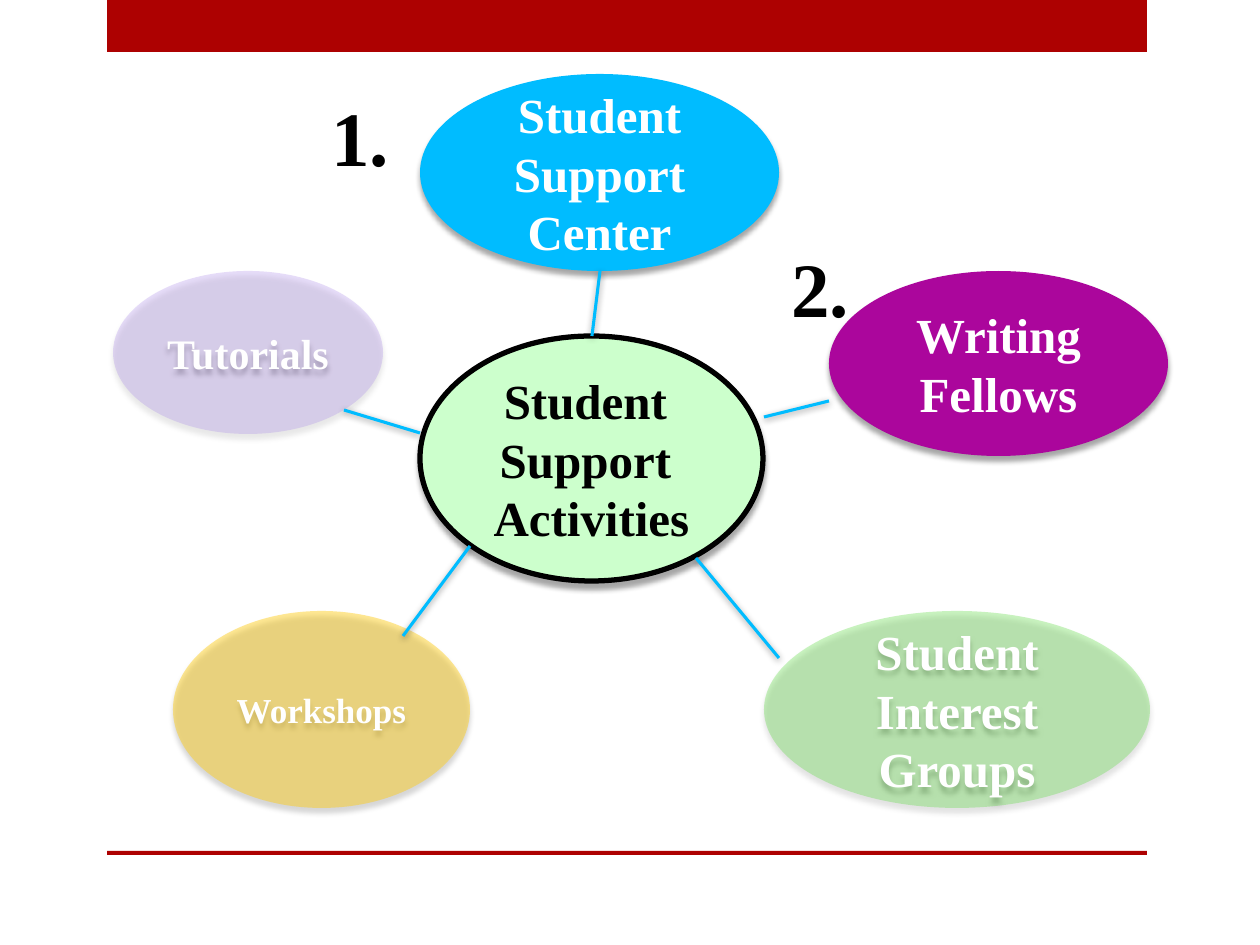
from lxml.etree import SubElement
from pptx import Presentation
from pptx.dml.color import RGBColor
from pptx.enum.shapes import MSO_CONNECTOR, MSO_SHAPE
from pptx.enum.text import MSO_ANCHOR, MSO_AUTO_SIZE, PP_ALIGN
from pptx.oxml.ns import qn
from pptx.util import Emu, Pt

FONT = "Times New Roman"
COLORS = {
    "red": "AD0101", "mint": "CCFFCC", "sky": "00BCFF", "green": "59DB3C",
    "lavender": "A27DE9", "purple": "AB069C", "gold": "FFCD15",
    "black": "000000", "white": "FFFFFF",
}
ACTIVITIES = [
    ("Student Support Center", (420, 74, 359, 197), "sky", 100, 28),
    ("Student Interest Groups", (764, 611, 386, 197), "green", 32, 28),
    ("Tutorials", (113, 271, 270, 163), "lavender", 26, 24),
    ("Writing Fellows", (829, 271, 339, 185), "purple", 100, 28),
    ("Workshops", (173, 611, 297, 197), "gold", 46, 20),
]
NUMBERS = [("1.", 319, 83), ("2.", 779, 234)]
SPOKES = [
    (600, 271, 592, 336), (764, 417, 829, 401), (696, 558, 779, 658),
    (470, 546, 403, 636), (420, 433, 344, 410),
]


def px(n):
    """Convert pixels at 126 to the inch into EMU."""
    return Emu(round(n * 914400 / 126))


def rgb(name):
    """Look up a named colour."""
    return RGBColor.from_string(COLORS[name])


def add_shadow(spPr, alpha, blur, dist, angle):
    """Give the shape properties one soft black outer shadow."""
    effects = spPr.find(qn("a:effectLst"))
    if effects is None:
        effects = SubElement(spPr, qn("a:effectLst"))
    shadow = SubElement(effects, qn("a:outerShdw"), blurRad=str(Pt(blur)),
                        dist=str(Pt(dist)), dir=str(angle * 60000), rotWithShape="0")
    color = SubElement(shadow, qn("a:srgbClr"), val=COLORS["black"])
    SubElement(color, qn("a:alpha"), val=str(alpha * 1000))


def add_filled(s, kind, box, color):
    """Add a borderless filled shape."""
    sp = s.shapes.add_shape(kind, *map(px, box))
    sp.shadow.inherit = False
    sp.fill.solid()
    sp.fill.fore_color.rgb = rgb(color)
    sp.line.fill.background()
    return sp


def write(tf, text, size, color, align):
    """Fill a text frame with bold paragraphs, one per line."""
    tf.text = text
    for p in tf.paragraphs:
        p.alignment = align
        p.font.name, p.font.size, p.font.bold = FONT, Pt(size), True
        p.font.color.rgb = rgb(color)


def add_bubble(s, text, box, color, opacity=100, size=28, text_color="white"):
    """Add a shadowed ellipse with centred text."""
    sp = add_filled(s, MSO_SHAPE.OVAL, box, color)
    spPr = sp._element.spPr
    if opacity < 100:
        fill = spPr.find(qn("a:solidFill")).find(qn("a:srgbClr"))
        SubElement(fill, qn("a:alpha"), val=str(opacity * 1000))
    add_shadow(spPr, 35, 3, 3, 90)
    tf = sp.text_frame
    tf.word_wrap = True
    tf.vertical_anchor = MSO_ANCHOR.MIDDLE
    write(tf, text, size, text_color, PP_ALIGN.CENTER)
    return sp


def add_number(s, text, x, y):
    """Add a large rank number."""
    tf = s.shapes.add_textbox(px(x), px(y), px(130), px(106)).text_frame
    tf.word_wrap = True
    tf.auto_size = MSO_AUTO_SIZE.SHAPE_TO_FIT_TEXT
    write(tf, text, 44, "black", PP_ALIGN.LEFT)


def add_spoke(s, points):
    """Add a line between the hub and an activity."""
    line = s.shapes.add_connector(MSO_CONNECTOR.STRAIGHT, *map(px, points))
    line.line.color.rgb = rgb("sky")
    line.line.width = Pt(1.75)
    add_shadow(line._element.spPr, 40, 4, 1, 88)


def main():
    """Build the hub-and-spoke slide."""
    prs = Presentation()
    prs.slide_width, prs.slide_height = px(1260), px(945)
    s = prs.slides.add_slide(prs.slide_layouts[6])
    for top, height in ((0, 52), (851, 4)):
        add_filled(s, MSO_SHAPE.RECTANGLE, (107, top, 1040, height), "red")
    hub = add_bubble(s, "Student \nSupport \nActivities", (420, 336, 343, 245),
                     "mint", text_color="black")
    hub.line.color.rgb = rgb("black")
    hub.line.width = Pt(3)
    for activity in ACTIVITIES:
        add_bubble(s, *activity)
    for number in NUMBERS:
        add_number(s, *number)
    for points in SPOKES:
        add_spoke(s, points)
    prs.save("out.pptx")


if __name__ == "__main__":
    main()
